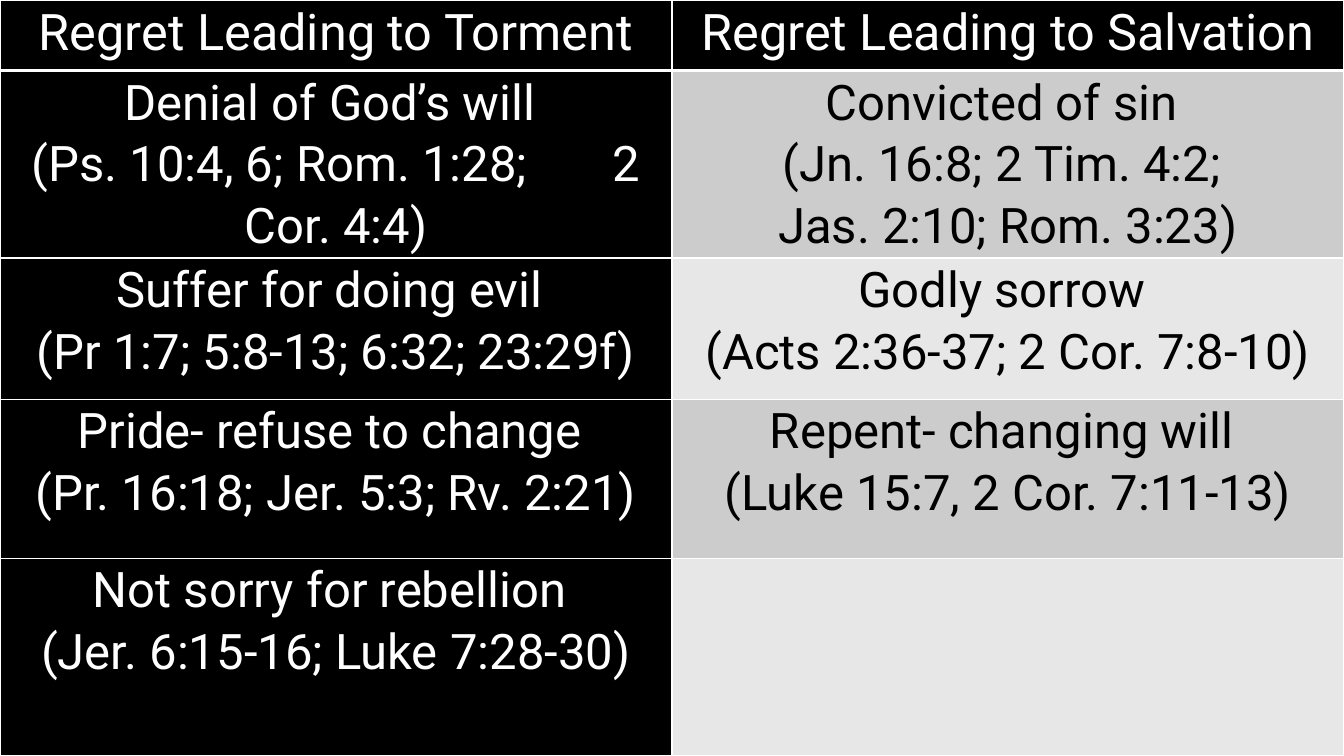
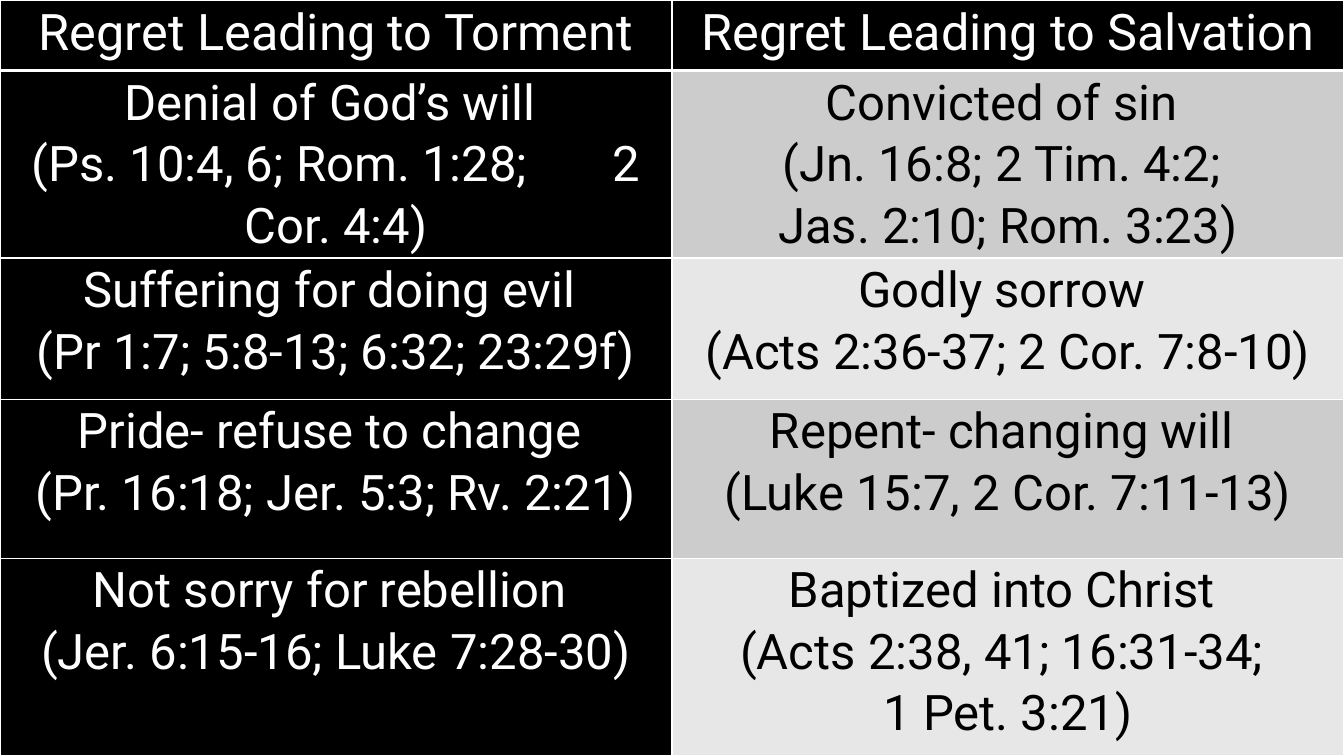
from dataclasses import dataclass

from lxml import etree
from pptx import Presentation
from pptx import util as u
from pptx.dml.color import RGBColor
from pptx.enum import text
from pptx.oxml.ns import qn


@dataclass(frozen=True)
class Theme:
    font: str = "Roboto"
    dark: str = "000000"
    light: str = "FFFFFF"
    bands: tuple[str, str] = ("CCCCCC", "E7E7E7")
    header_size: int = 36
    body_size: int = 35
    line_spacing: float = 1.07
    thin: int = 1
    thick: int = 3


@dataclass(frozen=True)
class Spaced:
    """A line whose two parts are held apart by one widened space."""
    before: str
    after: str
    extra: int  # points


Line = str | Spaced


@dataclass(frozen=True)
class Row:
    height: float
    torment: tuple[Line, ...]
    salvation: tuple[Line, ...] = ()


THEME = Theme()
WIDTH, HEIGHT = 13.33, 7.5
CELL_INSET = 0.07


def comparison_rows(evil: str, last_step: tuple[Line, ...] = ()) -> list[Row]:
    return [
        Row(0.7, ("Regret Leading to Torment",), ("Regret Leading to Salvation",)),
        Row(1.86,
            ("Denial of God’s will ",
             Spaced("(Ps. 10:4, 6; Rom. 1:28;", "2 Cor. 4:4)", 52)),
            ("Convicted of sin ", "(Jn. 16:8; 2 Tim. 4:2; ", "Jas. 2:10; Rom. 3:23)")),
        Row(1.4,
            (f"{evil} for doing evil ", "(Pr 1:7; 5:8-13; 6:32; 23:29f)"),
            ("Godly sorrow ", "(Acts 2:36-37; 2 Cor. 7:8-10)")),
        Row(1.58,
            ("Pride- refuse to change ", "(Pr. 16:18; Jer. 5:3; Rv. 2:21)"),
            ("Repent- changing will ", "(Luke 15:7, 2 Cor. 7:11-13)")),
        Row(1.96,
            ("Not sorry for rebellion ", "(Jer. 6:15-16; Luke 7:28-30)"),
            last_step),
    ]


SLIDES = [
    comparison_rows("Suffer"),
    comparison_rows("Suffering", ("Baptized into Christ ",
                                  "(Acts 2:38, 41; 16:31-34; ", "1 Pet. 3:21)")),
]


def set_borders(cell, top: int, bottom: int) -> None:
    tc_pr = cell._tc.get_or_add_tcPr()
    widths = {"L": THEME.thin, "R": THEME.thin, "T": top, "B": bottom}
    for side, width in widths.items():
        ln = etree.SubElement(tc_pr, qn(f"a:ln{side}"), w=str(u.Pt(width)))
        fill = etree.SubElement(ln, qn("a:solidFill"))
        etree.SubElement(fill, qn("a:srgbClr"), val=THEME.light)


def add_line(p, line: Line) -> None:
    if isinstance(line, str):
        p.add_run().text = line
        return
    for part in (line.before, " ", line.after):
        r = p.add_run()
        r.text = part
        if part == " ":
            r._r.get_or_add_rPr().set("spc", str(line.extra * 100))


def fill_cell(cell, lines: tuple[Line, ...], size: int, color: str, fill: str) -> None:
    cell.fill.solid()
    cell.fill.fore_color.rgb = RGBColor.from_string(fill)
    cell.margin_left = cell.margin_right = u.Inches(CELL_INSET)
    cell.margin_top = cell.margin_bottom = u.Inches(0)
    tf = cell.text_frame
    for i, line in enumerate(lines):
        p = tf.add_paragraph() if i else tf.paragraphs[0]
        add_line(p, line)
        p.alignment = text.PP_ALIGN.CENTER
        p.line_spacing = THEME.line_spacing
        p.font.name = THEME.font
        p.font.size = u.Pt(size)
        p.font.color.rgb = RGBColor.from_string(color)


def add_comparison(s, rows: list[Row]) -> None:
    table = s.shapes.add_table(len(rows), 2, u.Inches(0), u.Inches(0),
                               u.Inches(WIDTH), u.Inches(HEIGHT)).table
    table.first_row = table.horz_banding = False
    for i, row in enumerate(rows):
        table.rows[i].height = u.Inches(row.height)
        size = THEME.body_size if i else THEME.header_size
        top = THEME.thick if i == 1 else THEME.thin
        bottom = THEME.thin if i else THEME.thick
        right = (THEME.dark, THEME.bands[(i - 1) % 2]) if i else (THEME.light, THEME.dark)
        left = (THEME.light, THEME.dark)
        columns = ((row.torment, left), (row.salvation, right))
        for j, (lines, (color, fill)) in enumerate(columns):
            cell = table.cell(i, j)
            set_borders(cell, top, bottom)
            fill_cell(cell, lines, size, color, fill)


def main() -> None:
    prs = Presentation()
    prs.slide_width, prs.slide_height = u.Inches(WIDTH), u.Inches(HEIGHT)
    for rows in SLIDES:
        s = prs.slides.add_slide(prs.slide_layouts[6])
        s.background.fill.solid()
        s.background.fill.fore_color.rgb = RGBColor.from_string(THEME.dark)
        add_comparison(s, rows)
    prs.save("out.pptx")


if __name__ == "__main__":
    main()
